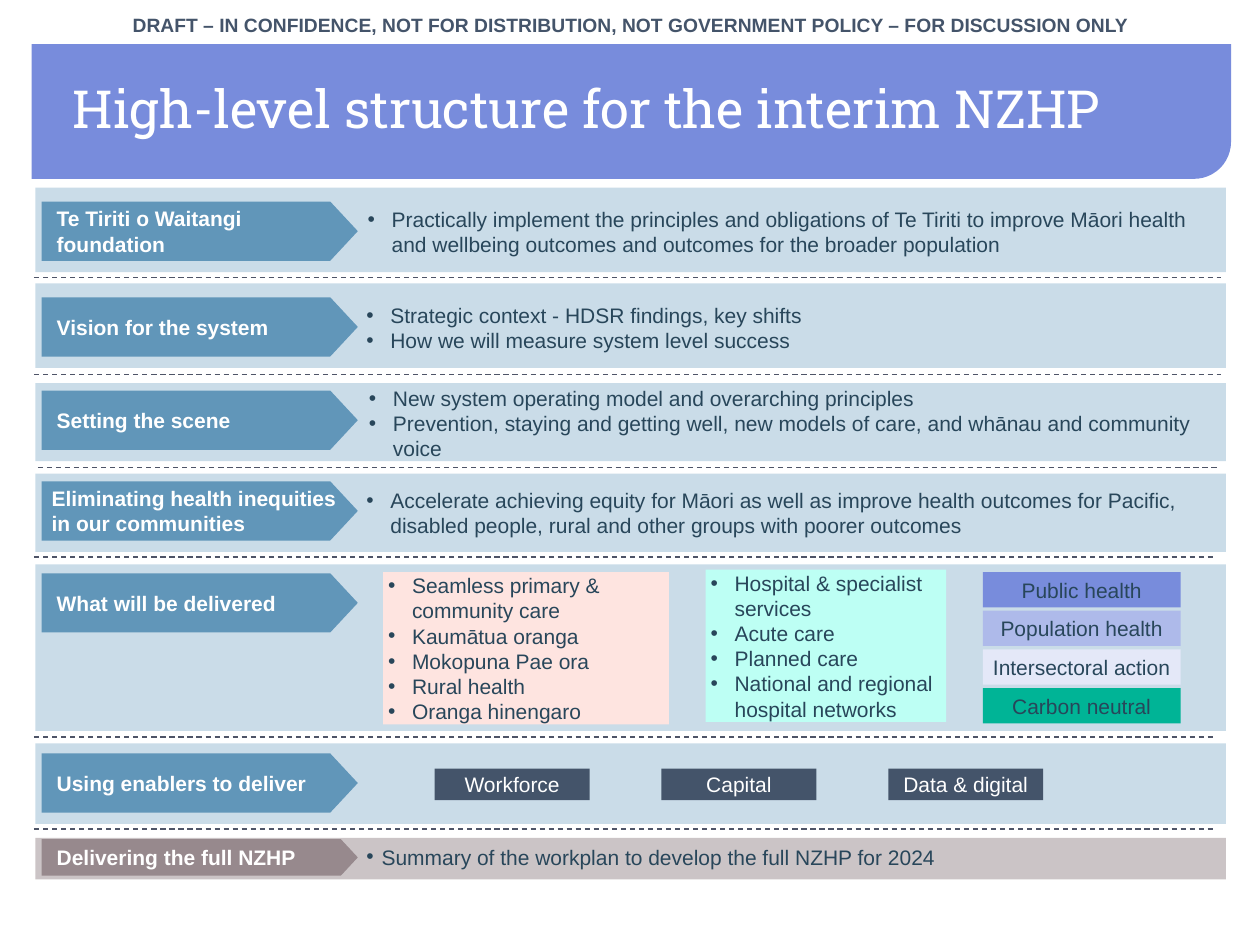
from lxml import etree
from pptx import Presentation
from pptx import util as u
from pptx.dml import color
from pptx.enum import dml, shapes, text
from pptx.oxml import ns

COLOURS = {
    "banner": "788CDC", "band": "CADCE8", "label": "6196B9",
    "final_band": "CBC4C6", "final_label": "97898D", "rule": "4E5467",
    "slate": "44546A", "ink": "28465A", "white": "FFFFFF",
    "pink": "FEE4E0", "mint": "BDFFF4", "lilac": "AEBAEA",
    "pale": "E4E8F8", "green": "00B496",
}
BODY = {"size": u.Pt(12), "name": "Arial", "bold": False}
BOLD = {**BODY, "bold": True}
NOTICE = {**BOLD, "size": u.Pt(11)}
TITLE = {"size": u.Pt(30), "name": "Roboto Slab", "bold": False}
WIDE = (0.1, 0.05, 0.1, 0.05)
SNUG = (0.04, 0.05, 0.04, 0.05)
LABEL = (0.12, 0.05, 0.08, 0.05)
TIGHT_LABEL = (0.08, 0.05, 0, 0.05)
LEFT, CENTRE = text.PP_ALIGN.LEFT, text.PP_ALIGN.CENTER
TOP, MIDDLE = text.MSO_ANCHOR.TOP, text.MSO_ANCHOR.MIDDLE
RECT = shapes.MSO_SHAPE.RECTANGLE
PENTAGON = shapes.MSO_SHAPE.PENTAGON
BAND_LEFT, BAND_WIDTH = 0.28, 9.45

ROWS = [
    (1.49, 0.67, 1.60, "Te Tiriti o Waitangi foundation", LABEL,
     (2.82, 1.59, 6.9, 0.5),
     ["Practically implement the principles and obligations of Te Tiriti to improve "
      "Māori health and wellbeing outcomes and outcomes for the broader population"]),
    (2.25, 0.67, 2.36, "Vision for the system", LABEL,
     (2.81, 2.35, 6.63, 0.5),
     ["Strategic context - HDSR findings, key shifts",
      "How we will measure system level success"]),
    (3.04, 0.62, 3.10, "Setting the scene", LABEL,
     (2.83, 3.01, 6.82, 0.71),
     ["New system operating model and overarching principles",
      "Prevention, staying and getting well, new models of care, and whānau and "
      "community voice"]),
    (3.76, 0.62, 3.82, "Eliminating health inequities in our communities", TIGHT_LABEL,
     (2.81, 3.82, 6.91, 0.5),
     ["Accelerate achieving equity for Māori as well as improve health outcomes for "
      "Pacific, disabled people, rural and other groups with poorer outcomes"]),
]
DIVIDERS = [(0.27, 2.2, 9.42), (0.27, 2.97, 9.42), (0.3, 3.71, 9.38),
            (0.27, 4.42, 9.38), (0.27, 5.85, 9.38), (0.27, 6.58, 9.38)]
CARE = ["Seamless primary & community care", "Kaumātua oranga", "Mokopuna Pae ora",
        "Rural health", "Oranga hinengaro"]
HOSPITAL = ["Hospital & specialist services", "Acute care", "Planned care",
            "National and regional hospital networks"]
THEMES = [("Public health", "banner"), ("Population health", "lilac"),
          ("Intersectoral action", "pale"), ("Carbon neutral", "green")]
ENABLERS = ["Workforce", "Capital", "Data & digital"]


def rgb(name):
    return color.RGBColor.from_string(COLOURS[name])


def inches(box):
    return [u.Inches(value) for value in box]


def add_bullet(paragraph, indent):
    properties = paragraph._p.get_or_add_pPr()
    properties.set("marL", str(u.Inches(indent)))
    properties.set("indent", str(-u.Inches(indent)))
    etree.SubElement(properties, ns.qn("a:buFont")).set("typeface", "Arial")
    etree.SubElement(properties, ns.qn("a:buChar")).set("char", "•")


def write(holder, lines, ink="ink", font=BODY, insets=WIDE, anchor=MIDDLE,
          align=LEFT, indent=0, spacing=None):
    frame = holder.text_frame
    frame.word_wrap = True
    frame.vertical_anchor = anchor
    for side, inset in zip(("left", "top", "right", "bottom"), insets):
        setattr(frame, f"margin_{side}", u.Inches(inset))
    for index, line in enumerate(lines):
        paragraph = frame.add_paragraph() if index else frame.paragraphs[0]
        paragraph.alignment = align
        if spacing:
            paragraph.line_spacing = spacing
        if indent:
            add_bullet(paragraph, indent)
        run = paragraph.add_run()
        run.text = line
        for key, value in font.items():
            setattr(run.font, key, value)
        run.font.color.rgb = rgb(ink)


def add_panel(slide, box, fill, preset=RECT):
    panel = slide.shapes.add_shape(preset, *inches(box))
    panel.shadow.inherit = False
    panel.fill.solid()
    panel.fill.fore_color.rgb = rgb(fill)
    panel.line.fill.background()
    return panel


def add_words(slide, box, lines, **style):
    write(slide.shapes.add_textbox(*inches(box)), lines, **style)


def add_label(slide, box, caption, fill="label", insets=LABEL):
    label = add_panel(slide, box, fill, PENTAGON)
    label.adjustments[0] = 0.465
    write(label, [caption], "white", BOLD, insets)


def add_header(slide, box):
    left, top, width, height = box
    banner = add_panel(slide, box, "banner", shapes.MSO_SHAPE.ROUND_1_RECTANGLE)
    banner.adjustments[0] = 0.274
    banner._element.spPr.xfrm.set("flipV", "1")
    add_words(slide, (0.86, top - 0.29, 8.3, 0.29),
              ["DRAFT – IN CONFIDENCE, NOT FOR DISTRIBUTION, NOT GOVERNMENT POLICY – "
               "FOR DISCUSSION ONLY"],
              ink="slate", font=NOTICE, anchor=TOP, align=CENTRE)
    add_words(slide, (left + 0.23, top, 8.83, height),
              ["High-level structure for the interim NZHP"],
              ink="white", font=TITLE, spacing=0.9)


def add_divider(slide, left, top, width):
    divider = slide.shapes.add_connector(
        shapes.MSO_CONNECTOR.STRAIGHT, *inches((left, top, left + width, top)))
    divider.line.color.rgb = rgb("rule")
    divider.line.width = u.Pt(0.75)
    divider.line.dash_style = dml.MSO_LINE.DASH
    etree.SubElement(divider._element.spPr, ns.qn("a:effectLst"))


def add_bullet_row(slide, box, label_top, caption, insets, detail_box, details):
    add_panel(slide, box, "band")
    add_label(slide, (box[0] + 0.05, label_top, 2.51, 0.47), caption, insets=insets)
    add_words(slide, detail_box, details, anchor=TOP, indent=0.19)


def add_delivery(slide, box):
    left, top, width, height = box
    add_panel(slide, box, "band")
    add_label(slide, (left + 0.05, top + 0.07, 2.51, 0.47), "What will be delivered")
    for x, y, card_width, fill, items in [(2.76, 0.06, 2.27, "pink", CARE),
                                          (5.32, 0.04, 1.91, "mint", HOSPITAL)]:
        card = add_panel(slide, (left + x, top + y, card_width, 1.21), fill)
        write(card, items, insets=SNUG, indent=0.19)
    for index, (theme, fill) in enumerate(THEMES):
        tile = add_panel(
            slide, (left + 7.52, top + 0.06 + index * 0.307, 1.57, 0.28), fill)
        write(tile, [theme], insets=SNUG, align=CENTRE)


def add_enablers(slide, box):
    left, top, width, height = box
    add_panel(slide, box, "band")
    add_label(slide, (left + 0.05, top + 0.08, 2.51, 0.47), "Using enablers to deliver")
    for index, enabler in enumerate(ENABLERS):
        tile = add_panel(
            slide, (left + 3.17 + index * 1.8, top + 0.2, 1.23, 0.25), "slate")
        write(tile, [enabler], "white", align=CENTRE)


def add_full_plan(slide, box):
    left, top, width, height = box
    add_panel(slide, box, "final_band")
    add_label(slide, (left + 0.05, top + 0.01, 2.51, 0.29),
              "Delivering the full NZHP", "final_label")
    add_words(slide, (left + 2.53, top, 6.58, 0.39),
              ["Summary of the workplan to develop the full NZHP for 2024"],
              anchor=TOP, indent=0.12)


def main():
    deck = Presentation()
    deck.slide_width, deck.slide_height = u.Inches(10), u.Inches(7.5)
    slide = deck.slides.add_slide(deck.slide_layouts[6])
    add_header(slide, (0.25, 0.35, 9.52, 1.07))
    for top, height, *content in ROWS:
        add_bullet_row(slide, (BAND_LEFT, top, BAND_WIDTH, height), *content)
    add_delivery(slide, (BAND_LEFT, 4.48, BAND_WIDTH, 1.32))
    add_enablers(slide, (BAND_LEFT, 5.9, BAND_WIDTH, 0.64))
    add_full_plan(slide, (BAND_LEFT, 6.65, BAND_WIDTH, 0.33))
    for divider in DIVIDERS:
        add_divider(slide, *divider)
    deck.save("out.pptx")


if __name__ == "__main__":
    main()
